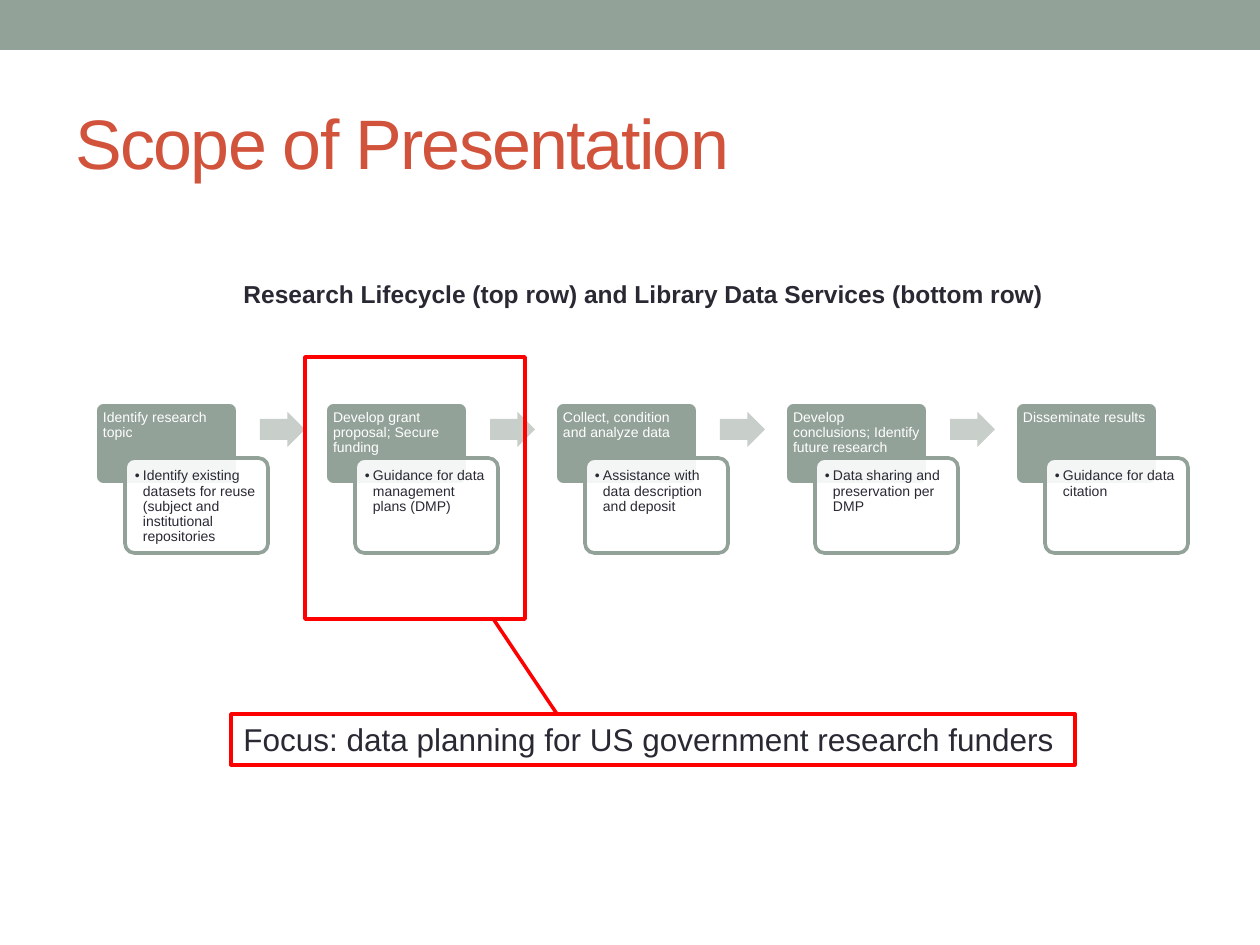
from lxml import etree
from pptx import Presentation
from pptx.dml.color import RGBColor
from pptx.enum.shapes import MSO_CONNECTOR, MSO_SHAPE
from pptx.enum.text import MSO_ANCHOR, MSO_AUTO_SIZE, PP_ALIGN
from pptx.oxml.ns import qn
from pptx.util import Emu, Pt

RECTANGLE = MSO_SHAPE.RECTANGLE
ROUNDED = MSO_SHAPE.ROUNDED_RECTANGLE
ARROW = MSO_SHAPE.RIGHT_ARROW
STRAIGHT = MSO_CONNECTOR.STRAIGHT
TOP, MIDDLE = MSO_ANCHOR.TOP, MSO_ANCHOR.MIDDLE
FIXED = MSO_AUTO_SIZE.NONE
LEFT = PP_ALIGN.LEFT

EMU_PER_PX = 914400 / 126
FONT = "Arial"
SAGE, PALE, WHITE = "93A299", "C8CECA", "FFFFFF"
RUST, INK, RED = "D2533C", "292934", "FF0000"

FIRST_LEFT, STEP = 95, 230
BULLET_INDENT = 8
STAGES = [
    ("Identify research topic",
     "Identify existing datasets for reuse (subject and institutional repositories"),
    ("Develop grant proposal; Secure funding",
     "Guidance for data management plans (DMP)"),
    ("Collect, condition and analyze data",
     "Assistance with data description and deposit"),
    ("Develop conclusions; Identify future research",
     "Data sharing and preservation per DMP"),
    ("Disseminate results", "Guidance for data citation"),
]


def px(length):
    return Emu(round(length * EMU_PER_PX))


def color(value):
    return RGBColor.from_string(value)


def set_attributes(target, values):
    for name, value in values.items():
        setattr(target, name, value)


def set_line(line, line_color, width):
    line.color.rgb = color(line_color)
    line.width = Pt(width)


def add_block(page, kind, area, fill=None, line=None, width=2.08, adjust=()):
    block = page.shapes.add_shape(kind, *map(px, area))
    block.shadow.inherit = False
    if fill:
        block.fill.solid()
        block.fill.fore_color.rgb = color(fill)
    else:
        block.fill.background()
    if line:
        set_line(block.line, line, width)
    else:
        block.line.fill.background()
    for index, value in enumerate(adjust):
        block.adjustments[index] = value
    return block


def set_opacity(block, percent):
    fill_color = block.fill._xPr.find(qn("a:solidFill"))[0]
    etree.SubElement(fill_color, qn("a:alpha"), val=str(percent * 1000))


def write_text(box, text, size, text_color, bold=False, wrap=True,
               anchor=TOP, insets=None, spacing=None):
    frame = box.text_frame
    set_attributes(frame, {"word_wrap": wrap, "auto_size": FIXED,
                           "vertical_anchor": anchor})
    if insets:
        sides = ("margin_left", "margin_top", "margin_right", "margin_bottom")
        set_attributes(frame, dict(zip(sides, map(px, insets))))
    para = frame.paragraphs[0]
    set_attributes(para, {"alignment": LEFT, "line_spacing": spacing})
    span = para.add_run()
    span.text = text
    set_attributes(span.font, {"name": FONT, "size": Pt(size), "bold": bold})
    span.font.color.rgb = color(text_color)
    return para


def add_text(page, area, *content, **options):
    box = page.shapes.add_textbox(*map(px, area))
    return write_text(box, *content, **options)


def add_bullet(para):
    properties = para._p.get_or_add_pPr()
    indent = px(BULLET_INDENT)
    properties.set("marL", str(indent))
    properties.set("indent", str(-indent))
    etree.SubElement(properties, qn("a:buFont"), typeface=FONT)
    etree.SubElement(properties, qn("a:buChar"), char="•")


def add_title(page, text):
    title = page.shapes.title
    area = map(px, (63, 73, 1134, 136))
    set_attributes(title, dict(zip(("left", "top", "width", "height"), area)))
    para = write_text(title, text, 40, RUST, anchor=MIDDLE)
    para.runs[0].font._element.set("spc", "-100")


def add_stage(page, left, activity, service):
    add_block(page, ROUNDED, (left, 402, 143, 83), SAGE, WHITE, adjust=[0.1])
    add_text(page, (left, 402, 143, 55), activity, 8, WHITE,
             insets=(8, 8, 4, 4), spacing=0.9)
    card = add_block(page, ROUNDED, (left + 30, 458, 143, 95), WHITE, SAGE,
                     adjust=[0.1])
    set_opacity(card, 90)
    para = add_text(page, (left + 32, 461, 137, 89), service, 8, INK,
                    insets=(8, 8, 8, 8), spacing=0.9)
    add_bullet(para)


def add_lifecycle(page):
    for index, (activity, service) in enumerate(STAGES):
        left = FIRST_LEFT + index * STEP
        add_stage(page, left, activity, service)
        if index < len(STAGES) - 1:
            add_block(page, ARROW, (left + 165, 412, 45, 35), PALE,
                      adjust=[0.6, 0.5])


def add_callout_line(page, *ends):
    callout = page.shapes.add_connector(STRAIGHT, *map(px, ends))
    set_line(callout.line, RED, 2)
    etree.SubElement(callout._element.spPr, qn("a:effectLst"))


def add_focus(page):
    add_block(page, RECTANGLE, (305, 357, 220, 262), line=RED)
    focus = add_block(page, RECTANGLE, (231, 714, 844, 51), line=RED, width=2)
    write_text(focus, "Focus: data planning for US government research funders",
               18, INK, wrap=False)
    add_callout_line(page, 557, 714, 494, 620)


def main():
    deck = Presentation()
    set_attributes(deck, {"slide_width": px(1260), "slide_height": px(945)})
    page = deck.slides.add_slide(deck.slide_layouts[5])
    add_block(page, RECTANGLE, (0, 0, 1260, 50), SAGE)
    add_title(page, "Scope of Presentation")
    add_text(page, (231, 273, 840, 43),
             "Research Lifecycle (top row) and Library Data Services (bottom row)",
             14, INK, bold=True)
    add_lifecycle(page)
    add_focus(page)
    deck.save("out.pptx")


if __name__ == "__main__":
    main()
